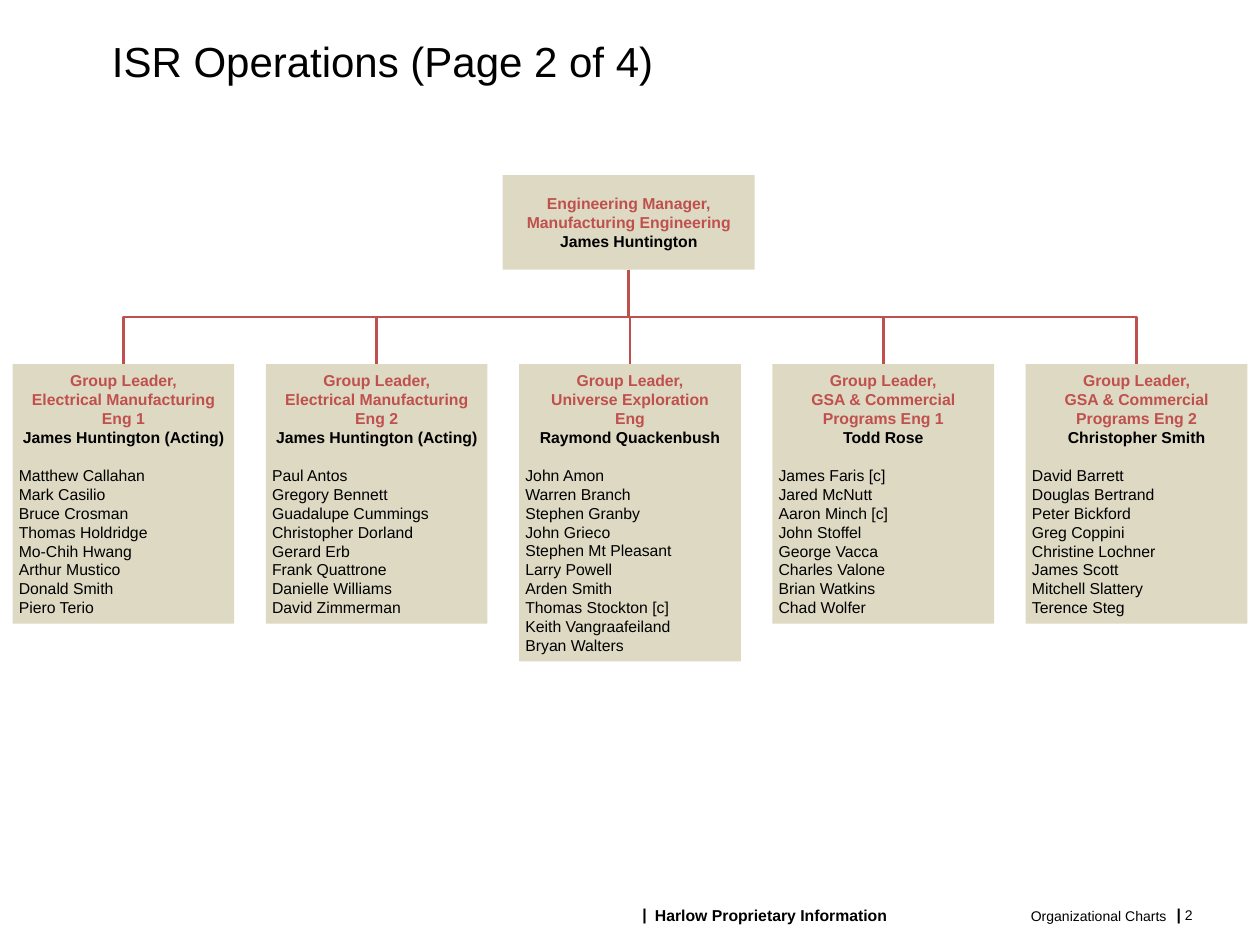
from pptx import Presentation
from pptx.dml.color import RGBColor
from pptx.enum.shapes import MSO_CONNECTOR, MSO_SHAPE
from pptx.enum.text import MSO_ANCHOR, PP_ALIGN
from pptx.oxml.ns import qn
from pptx.util import Inches, Pt
from lxml import etree

RECT, ELBOW = MSO_SHAPE.RECTANGLE, MSO_CONNECTOR.ELBOW
TOP, MIDDLE = MSO_ANCHOR.TOP, MSO_ANCHOR.MIDDLE
LEFT, CENTER, RIGHT = PP_ALIGN.LEFT, PP_ALIGN.CENTER, PP_ALIGN.RIGHT

COLORS = {"box": "DDD9C3", "accent": "C0504D", "text": "000000"}
MANAGER_X, MANAGER_BOTTOM = 4.99, 2.14
GROUP_LEFT, GROUP_TOP, GROUP_STEP, GROUP_WIDTH = 0.1, 2.89, 2.01, 1.76

MANAGER = (["Engineering Manager,", "Manufacturing Engineering"], "James Huntington", [])
GROUPS = [
    (["Group Leader,", "Electrical Manufacturing", "Eng 1"], "James Huntington (Acting)",
     ["Matthew Callahan", "Mark Casilio", "Bruce Crosman", "Thomas Holdridge",
      "Mo-Chih Hwang", "Arthur Mustico", "Donald Smith", "Piero Terio"]),
    (["Group Leader,", "Electrical Manufacturing", "Eng 2"], "James Huntington (Acting)",
     ["Paul Antos", "Gregory Bennett", "Guadalupe Cummings", "Christopher Dorland",
      "Gerard Erb", "Frank Quattrone", "Danielle Williams", "David Zimmerman"]),
    (["Group Leader,", "Universe Exploration", "Eng"], "Raymond Quackenbush",
     ["John Amon", "Warren Branch", "Stephen Granby", "John Grieco", "Stephen Mt Pleasant",
      "Larry Powell", "Arden Smith", "Thomas Stockton [c]", "Keith Vangraafeiland",
      "Bryan Walters"]),
    (["Group Leader,", "GSA & Commercial Programs Eng 1"], "Todd Rose",
     ["James Faris [c]", "Jared McNutt", "Aaron Minch [c]", "John Stoffel",
      "George Vacca", "Charles Valone", "Brian Watkins", "Chad Wolfer"]),
    (["Group Leader,", "GSA & Commercial Programs Eng 2"], "Christopher Smith",
     ["David Barrett", "Douglas Bertrand", "Peter Bickford", "Greg Coppini",
      "Christine Lochner", "James Scott", "Mitchell Slattery", "Terence Steg"]),
]


def rgb(name):
    """Return a palette colour."""
    return RGBColor.from_string(COLORS[name])


def add_run(p, text, size=9, bold=False, color="text"):
    """Add a formatted run to a paragraph."""
    r = p.add_run()
    r.text = text
    r.font.name, r.font.size, r.font.bold = "Arial", Pt(size), bold
    r.font.color.rgb = rgb(color)


def add_label(s, box, text, align=LEFT, anchor=MIDDLE, wrap=True, **fmt):
    """Add a one-line text box and return its paragraph."""
    tf = s.shapes.add_textbox(*map(Inches, box)).text_frame
    tf.word_wrap, tf.vertical_anchor = wrap, anchor
    p = tf.paragraphs[0]
    p.alignment = align
    add_run(p, text, **fmt)
    return p


def add_box(s, box, role, leader, members):
    """Add an organization box with a role, its holder and the members."""
    sp = s.shapes.add_shape(RECT, *map(Inches, box))
    sp.shadow.inherit = False
    sp.fill.solid()
    sp.fill.fore_color.rgb = rgb("box")
    sp.line.fill.background()
    tf = sp.text_frame
    tf.word_wrap, tf.vertical_anchor = True, MIDDLE
    tf.margin_left = tf.margin_right = tf.margin_top = tf.margin_bottom = Inches(0.05)
    lines = [(text, CENTER, True, "accent") for text in role]
    lines.append((leader, CENTER, True, "text"))
    lines += [(name, LEFT, False, "text") for name in members]
    for i, (text, align, bold, color) in enumerate(lines):
        p = tf.add_paragraph() if i else tf.paragraphs[0]
        p.alignment = align
        if i == len(role) + 1:
            p.space_before = Pt(10.8)
        add_run(p, text, bold=bold, color=color)


def add_branch(s, x1, y1, x2, y2):
    """Add an elbow connector that leaves and arrives vertically."""
    drop, span = y2 - y1, abs(x2 - x1)
    left, top = (x1 + x2 - drop) / 2, (y1 + y2 - span) / 2
    ends = (left, left + drop) if x2 < x1 else (left + drop, left)
    c = s.shapes.add_connector(ELBOW, Inches(ends[0]), Inches(top),
                               Inches(ends[1]), Inches(top + span))
    c.line.color.rgb = rgb("accent")
    c.line.width = Pt(1.5)
    sp_pr = c._element.spPr
    sp_pr.find(qn("a:xfrm")).set("rot", "5400000" if x2 < x1 else "16200000")
    etree.SubElement(sp_pr, qn("a:effectLst"))


def add_footer(s):
    """Add the footer labels and page number."""
    add_label(s, (5, 7.13, 0.24, 0.26), "|", anchor=TOP, wrap=False, bold=True)
    add_label(s, (5.1, 7.16, 2.27, 0.21), "Harlow Proprietary Information", bold=True)
    add_label(s, (7.08, 7.15, 2.31, 0.24), "Organizational Charts ", align=RIGHT, size=8)
    p = add_label(s, (9.24, 7.11, 0.73, 0.29), "|", wrap=False, bold=True)
    add_run(p, " 2", size=8)


def main():
    """Build the organization chart slide."""
    prs = Presentation()
    prs.slide_width, prs.slide_height = Inches(10), Inches(7.5)
    s = prs.slides.add_slide(prs.slide_layouts[6])
    add_footer(s)
    add_label(s, (0.79, 0.19, 6.63, 0.59), "ISR Operations (Page 2 of 4)", size=24)
    add_box(s, (MANAGER_X - 1, 1.39, 2, 0.75), *MANAGER)
    for i, (role, leader, members) in enumerate(GROUPS):
        x = GROUP_LEFT + i * GROUP_STEP
        height = 2.06 + 0.15 * (len(members) - 8)
        add_branch(s, MANAGER_X, MANAGER_BOTTOM, x + GROUP_WIDTH / 2, GROUP_TOP)
        add_box(s, (x, GROUP_TOP, GROUP_WIDTH, height), role, leader, members)
    prs.save("out.pptx")


if __name__ == "__main__":
    main()
